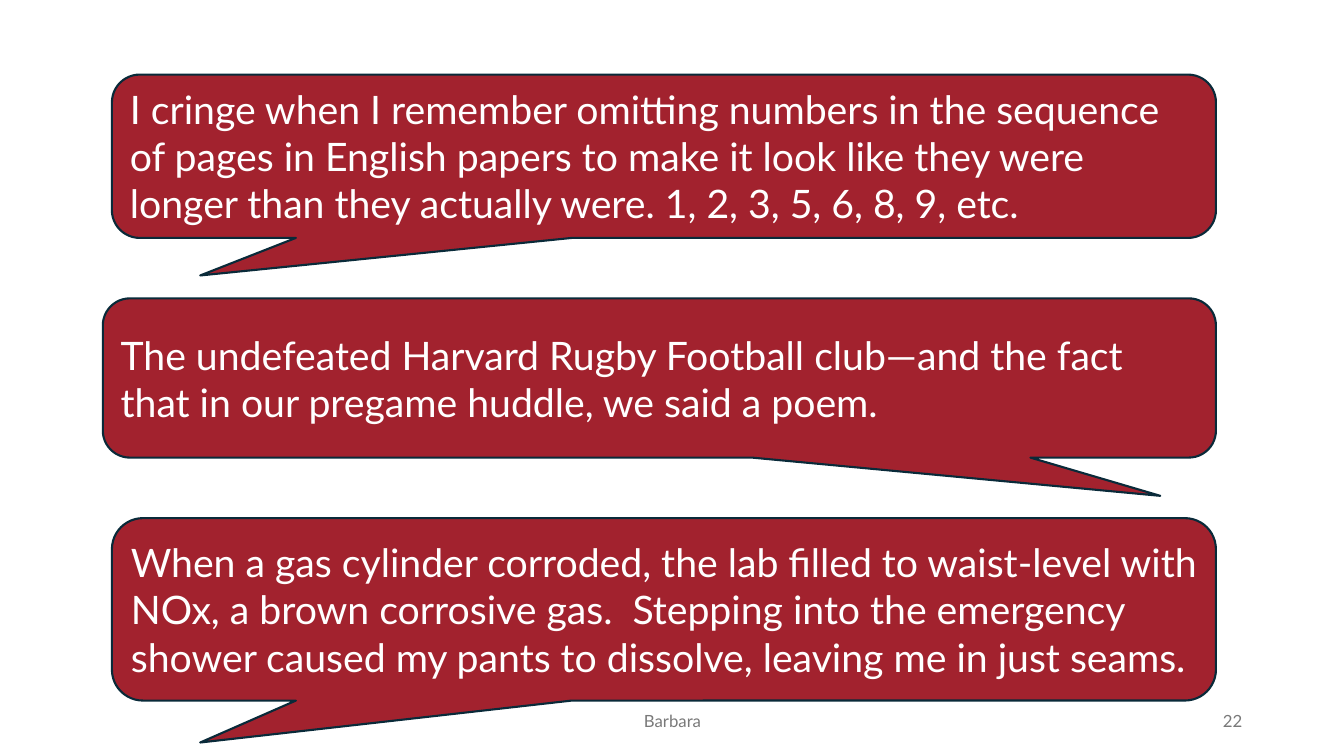
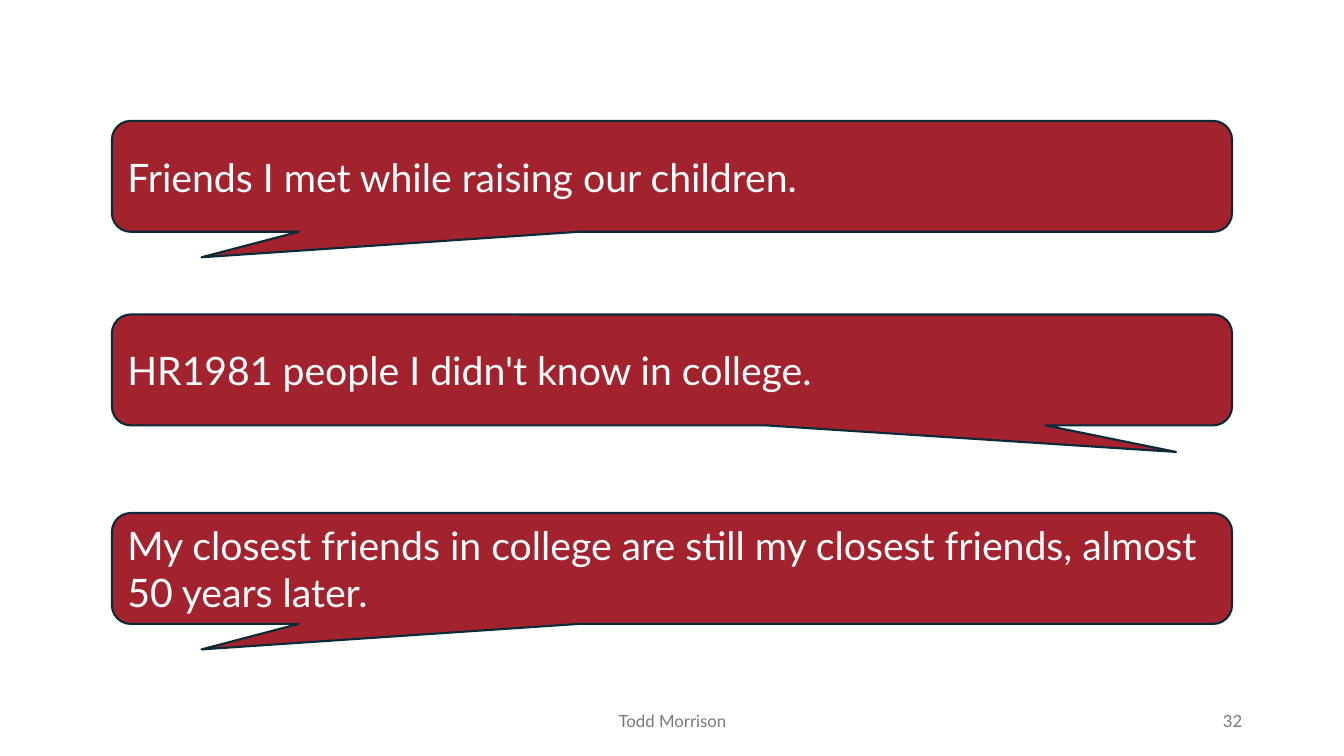
from dataclasses import dataclass

from pptx import Presentation
from pptx.dml.color import RGBColor
from pptx.enum.shapes import MSO_SHAPE
from pptx.enum.text import MSO_ANCHOR, PP_ALIGN
from pptx.presentation import Presentation as Deck
from pptx.slide import Slide
from pptx.text.text import TextFrame
from pptx.util import Inches, Pt

RED = RGBColor(0xA2, 0x22, 0x2E)
NAVY = RGBColor(0x09, 0x2A, 0x39)
WHITE = RGBColor(0xFF, 0xFF, 0xFF)
GRAY = RGBColor(0x79, 0x79, 0x79)
FONT = "Lato"
LEFT_TAIL = (-0.42, 0.73)
RIGHT_TAIL = (0.45, 0.74)
ROUND = 0.17


@dataclass(frozen=True)
class Bubble:
    text: str
    left: float
    top: float
    width: float
    height: float
    tail: tuple[float, float] = LEFT_TAIL


@dataclass(frozen=True)
class Page:
    author: str
    number: int
    bubbles: tuple[Bubble, ...]


PAGES = (
    Page("Barbara", 22, (
        Bubble("I cringe when I remember omitting numbers in the sequence of pages in "
               "English papers to make it look like they were longer than they "
               "actually were. 1, 2, 3, 5, 6, 8, 9, etc.",
               1.11, 0.74, 10.95, 1.62),
        Bubble("The undefeated Harvard Rugby Football club—and the fact that in our "
               "pregame huddle, we said a poem.",
               1.02, 2.96, 11.04, 1.58, RIGHT_TAIL),
        Bubble("When a gas cylinder corroded, the lab filled to waist-level with NOx, "
               "a brown corrosive gas.  Stepping into the emergency shower caused "
               "my pants to dissolve, leaving me in just seams.",
               1.11, 5.14, 10.95, 1.81),
    )),
    Page("Todd Morrison", 32, (
        Bubble("Friends I met while raising our children.",
               1.11, 1.2, 11.11, 1.1),
        Bubble("HR1981 people I didn't know in college.",
               1.11, 3.12, 11.11, 1.1, RIGHT_TAIL),
        Bubble("My closest friends in college are still my closest friends, almost "
               "50 years later.",
               1.11, 5.09, 11.11, 1.1),
    )),
)


def set_text(frame: TextFrame, text: str, size: int, color: RGBColor,
             align: PP_ALIGN) -> None:
    frame.word_wrap = True
    frame.vertical_anchor = MSO_ANCHOR.MIDDLE
    para = frame.paragraphs[0]
    para.text = text
    para.alignment = align
    font = para.runs[0].font
    font.name = FONT
    font.size = Pt(size)
    font.color.rgb = color


def add_footer(slide: Slide, text: str, left: float, width: float,
               align: PP_ALIGN) -> None:
    box = slide.shapes.add_textbox(Inches(left), Inches(6.95),
                                   Inches(width), Inches(0.4))
    set_text(box.text_frame, text, 12, GRAY, align)


def add_bubble(slide: Slide, bubble: Bubble) -> None:
    shape = slide.shapes.add_shape(
        MSO_SHAPE.ROUNDED_RECTANGULAR_CALLOUT,
        Inches(bubble.left), Inches(bubble.top),
        Inches(bubble.width), Inches(bubble.height))
    for i, value in enumerate((*bubble.tail, ROUND)):
        shape.adjustments[i] = value
    shape.shadow.inherit = False
    shape.fill.solid()
    shape.fill.fore_color.rgb = RED
    shape.line.color.rgb = NAVY
    shape.line.width = Pt(1.5)
    set_text(shape.text_frame, bubble.text, 28, WHITE, PP_ALIGN.LEFT)


def add_page(deck: Deck, page: Page) -> None:
    slide = deck.slides.add_slide(deck.slide_layouts[6])
    add_footer(slide, page.author, 4.42, 4.5, PP_ALIGN.CENTER)
    add_footer(slide, str(page.number), 9.42, 3, PP_ALIGN.RIGHT)
    for bubble in page.bubbles:
        add_bubble(slide, bubble)


def main() -> None:
    deck = Presentation()
    deck.slide_width = Inches(13.33)
    deck.slide_height = Inches(7.5)
    for page in PAGES:
        add_page(deck, page)
    deck.save("out.pptx")


if __name__ == "__main__":
    main()
